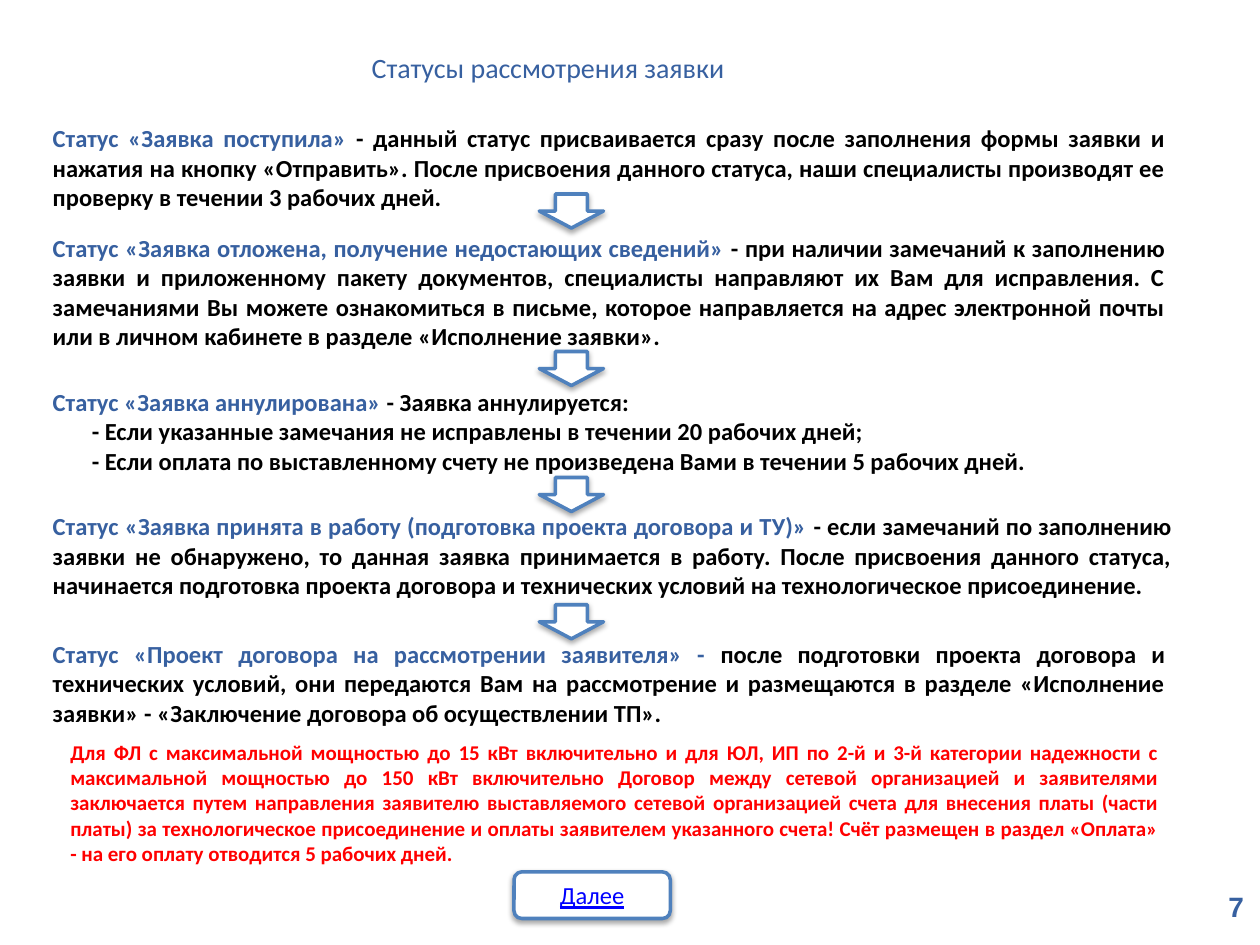
import pptx
import pptx.util
import pptx.dml.color
import pptx.enum.shapes
import pptx.enum.text
import lxml.etree

Inches = pptx.util.Inches
SHAPE = pptx.enum.shapes.MSO_SHAPE
ALIGN = pptx.enum.text.PP_ALIGN
ANCHOR = pptx.enum.text.MSO_ANCHOR
COLORS = {"heading": "3760A0", "body": "000000", "note": "FF0000",
          "link": "0000FF", "outline": "4F81BD", "paper": "FFFFFF"}
SHADOW = """<a:effectLst xmlns:a="http://schemas.openxmlformats.org/drawingml/2006/main">
<a:outerShdw blurRad="38100" dist="22860" dir="5400000" rotWithShape="0">
<a:srgbClr val="000000"><a:alpha val="35000"/></a:srgbClr></a:outerShdw></a:effectLst>"""


def add_span(para, text, color, **formats):
    span = para.add_run()
    span.text = text
    span.font.color.rgb = pptx.dml.color.RGBColor.from_string(COLORS[color])
    for name, value in ({"name": "Calibri", "size": pptx.util.Pt(14)} | formats).items():
        setattr(span.font, name, value)


def add_outlined_shape(kind, left, top, width, height):
    """Add a white preset shape with a blue line and a soft shadow below."""
    shape = page.shapes.add_shape(kind, Inches(left), Inches(top), Inches(width), Inches(height))
    shape.fill.solid()
    shape.fill.fore_color.rgb = pptx.dml.color.RGBColor.from_string(COLORS["paper"])
    shape.line.color.rgb = pptx.dml.color.RGBColor.from_string(COLORS["outline"])
    shape.line.width = pptx.util.Pt(2)
    shape.shadow.inherit = False
    effects = shape.element.spPr.find(pptx.oxml.ns.qn("a:effectLst"))
    effects.getparent().replace(effects, lxml.etree.fromstring(SHADOW))
    return shape


deck = pptx.Presentation()
deck.slide_width, deck.slide_height = Inches(10), Inches(7.5)
page = deck.slides.add_slide(deck.slide_layouts[5])

# Title
title = page.shapes.title
title.left, title.top, title.width, title.height = Inches(2.9), Inches(0.35), Inches(7), Inches(0.37)
frame = title.text_frame
for side in ("left", "top", "right", "bottom"):
    setattr(frame, "margin_" + side, Inches(0.05))
frame.vertical_anchor = ANCHOR.TOP
frame.auto_size = pptx.enum.text.MSO_AUTO_SIZE.NONE
frame.paragraphs[0].alignment = ALIGN.LEFT
add_span(frame.paragraphs[0], "Статусы рассмотрения заявки", "heading", size=pptx.util.Pt(16))

# Statuses: top, height, right margin, heading, text, indented conditions
statuses = [
    (0.93, 0.81, 0.15, "Статус «Заявка поступила» ",
     "- данный статус присваивается сразу после заполнения формы заявки и нажатия на кнопку "
     "«Отправить». После присвоения данного статуса, наши специалисты производят ее проверку "
     "в течении 3 рабочих дней.", []),
    (1.8, 1.04, 0.15, "Статус «Заявка отложена, получение недостающих сведений» ",
     "- при наличии замечаний к заполнению заявки и приложенному пакету документов, специалисты "
     "направляют их Вам для исправления. С замечаниями Вы можете ознакомиться в письме, которое "
     "направляется на адрес электронной почты или в личном кабинете в разделе «Исполнение заявки».", []),
    (3.02, 0.81, 0.1, "Статус «Заявка аннулирована» ", "- Заявка аннулируется:",
     ["- Если указанные замечания не исправлены в течении 20 рабочих дней;",
      "- Если оплата по выставленному счету не произведена Вами в течении 5 рабочих дней."]),
    (4.01, 0.81, 0.1, "Статус «Заявка принята в работу (подготовка проекта договора и ТУ)» ",
     "- если замечаний по заполнению заявки не обнаружено, то данная заявка принимается в работу. "
     "После присвоения данного статуса, начинается подготовка проекта договора и технических "
     "условий на технологическое присоединение.", []),
    (5.02, 0.81, 0.15, "Статус «Проект договора на рассмотрении заявителя» - ",
     "после подготовки проекта договора и технических условий, они передаются Вам на рассмотрение "
     "и размещаются в разделе «Исполнение заявки» - «Заключение договора об осуществлении ТП».", []),
]
for top, height, margin, heading, text, conditions in statuses:
    box = page.shapes.add_textbox(Inches(0.32), Inches(top), Inches(9.08), Inches(height))
    box.text_frame.word_wrap = True
    box.text_frame.margin_right = Inches(margin)
    para = box.text_frame.paragraphs[0]
    para.alignment = ALIGN.JUSTIFY
    add_span(para, heading, "heading", bold=True)
    add_span(para, text, "body", bold=True)
    for condition in conditions:
        para = box.text_frame.add_paragraph()
        para._p.get_or_add_pPr().set("marL", str(Inches(0.31)))
        add_span(para, condition, "body", bold=True)

# Payment note
box = page.shapes.add_textbox(Inches(0.46), Inches(5.82), Inches(8.84), Inches(1.11))
box.text_frame.word_wrap = True
para = box.text_frame.paragraphs[0]
para.alignment = ALIGN.JUSTIFY
add_span(para,
         "Для ФЛ с максимальной мощностью до 15 кВт включительно и для ЮЛ, ИП по 2-й и 3-й категории "
         "надежности с максимальной мощностью до 150 кВт включительно Договор между сетевой "
         "организацией и заявителями заключается путем направления заявителю выставляемого сетевой "
         "организацией счета для внесения платы (части платы) за технологическое присоединение и "
         "оплаты заявителем указанного счета! Счёт размещен в раздел «Оплата» - на его оплату "
         "отводится 5 рабочих дней.", "note", size=pptx.util.Pt(12), bold=True)

# Arrows between statuses
for top in (1.54, 2.79, 3.79, 4.8):
    add_outlined_shape(SHAPE.DOWN_ARROW, 4.28, top, 0.51, 0.27)

# Next button
button = add_outlined_shape(SHAPE.ROUNDED_RECTANGLE, 4.08, 6.92, 1.24, 0.37)
button.text_frame.vertical_anchor = ANCHOR.MIDDLE
para = button.text_frame.paragraphs[0]
para.alignment = ALIGN.CENTER
add_span(para, "Далее", "link", underline=True)

# Page number
box = page.shapes.add_textbox(Inches(9.65), Inches(7.01), Inches(0.35), Inches(0.37))
add_span(box.text_frame.paragraphs[0], "7", "heading", name="Arial", size=pptx.util.Pt(16), bold=True)

deck.save("out.pptx")
